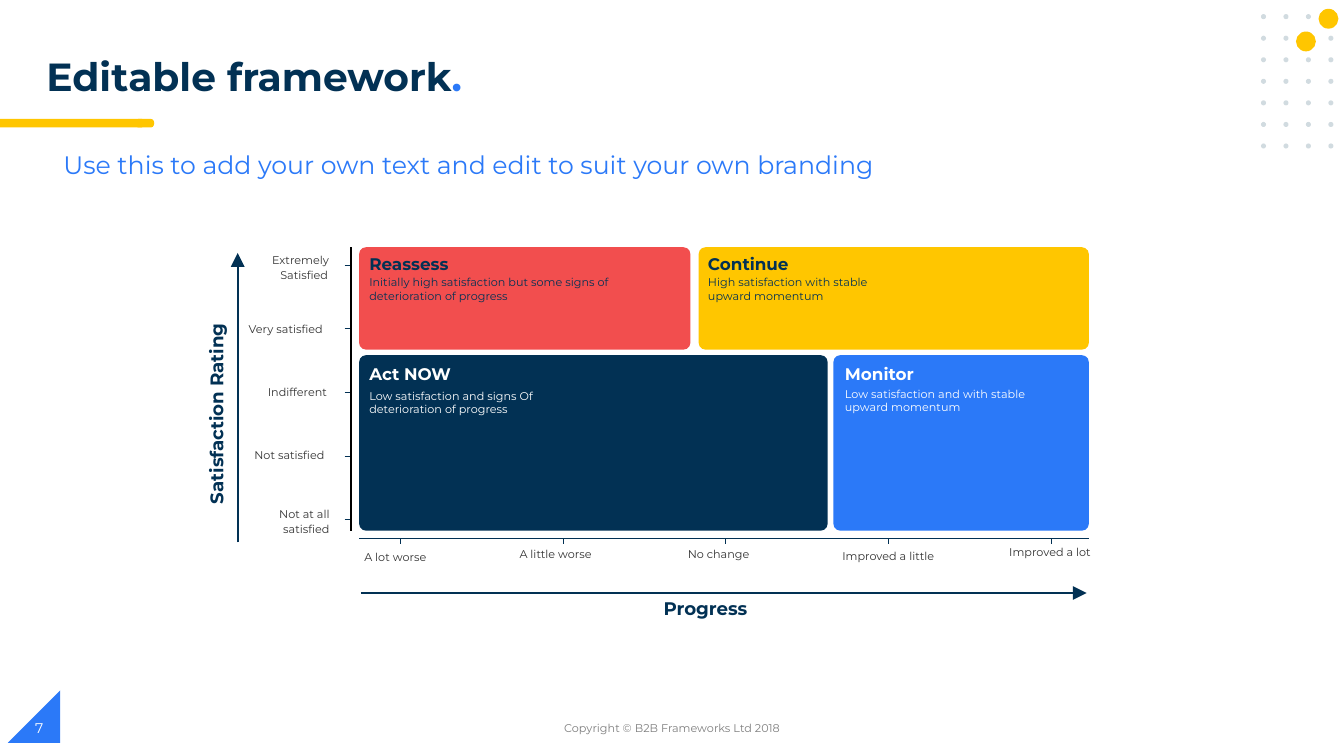
from lxml.etree import SubElement
from pptx import Presentation
from pptx.dml.color import RGBColor
from pptx.enum.shapes import MSO_CONNECTOR, MSO_SHAPE
from pptx.enum.text import MSO_ANCHOR, PP_ALIGN
from pptx.oxml.ns import qn
from pptx.util import Pt

NAVY = RGBColor(0x02, 0x31, 0x54)
BLUE = RGBColor(0x2B, 0x79, 0xF8)
YELLOW = RGBColor(0xFF, 0xC6, 0x00)
RED = RGBColor(0xF2, 0x4E, 0x4E)
DOT_GREY = RGBColor(0xD1, 0xDB, 0xE0)
LABEL_GREY = RGBColor(0x33, 0x33, 0x33)
FOOTER_GREY = RGBColor(0x7F, 0x7F, 0x7F)
WHITE = RGBColor(0xFF, 0xFF, 0xFF)
BLACK = RGBColor(0, 0, 0)
LEFT, CENTER = PP_ALIGN.LEFT, PP_ALIGN.CENTER

presentation = Presentation()
presentation.slide_width = Pt(960)
presentation.slide_height = Pt(540)
slide = presentation.slides.add_slide(presentation.slide_layouts[6])


def add_shape(kind, left, top, width, height, color):
    shape = slide.shapes.add_shape(kind, Pt(left), Pt(top), Pt(width), Pt(height))
    shape.shadow.inherit = False
    shape.fill.solid()
    shape.fill.fore_color.rgb = color
    shape.line.fill.background()
    return shape


def add_text(left, top, width, height, runs, insets=(7.2, 3.6), align=LEFT):
    """Each run is (text, size, color, bold); all share the first paragraph."""
    box = slide.shapes.add_textbox(Pt(left), Pt(top), Pt(width), Pt(height))
    frame = box.text_frame
    frame.word_wrap = True
    frame.margin_left, frame.margin_top = Pt(insets[0]), Pt(insets[1])
    frame.margin_right = frame.margin_bottom = 0
    frame.paragraphs[0].alignment = align
    for text, size, color, bold in runs:
        run = frame.paragraphs[0].add_run()
        run.text = text
        run.font.name = "Montserrat"
        run.font.size = Pt(size)
        run.font.color.rgb = color
        run.font.bold = bold
    return box


# Corner decoration: page triangle, yellow bar, dot grid
corner = add_shape(MSO_SHAPE.RIGHT_TRIANGLE, 5.6, 493.2, 37.4, 37.4, BLUE)
corner._element.spPr.xfrm.set("flipH", "1")
add_shape(MSO_SHAPE.FLOWCHART_TERMINATOR, 96.5, 85, 13.7, 6, YELLOW)
add_shape(MSO_SHAPE.RECTANGLE, 0, 85, 101.5, 6, YELLOW)
for row in range(7):
    for column in range(4):
        add_shape(MSO_SHAPE.OVAL, 900.7 + 16.05 * column, 10.1 + 15.4 * row,
                  3.6, 3.6, DOT_GREY)
for left, top in ((941.8, 6.3), (925.7, 22.5)):
    add_shape(MSO_SHAPE.OVAL, left, top, 14.2, 14.2, YELLOW)

# Title, subtitle and footer
title = add_text(26, 37.4, 406, 43.2, [("Editable framework", 28, NAVY, True),
                                       (".", 28, BLUE, True)])
title.text_frame.paragraphs[0].line_spacing = 0.9
add_text(38.2, 103, 618.5, 34.6,
         [("Use this to add your own text and edit to suit your own branding",
           18, BLUE, False)])
copyright_line = add_text(318.2, 505.4, 324, 28.8,
                          [("Copyright © B2B Frameworks Ltd 2018", 8, FOOTER_GREY, False)],
                          align=CENTER)
copyright_line.text_frame.margin_right = Pt(7.2)
page_number = add_text(18, 505.4, 216, 28.8, [("7", 10, WHITE, False)])
for footer in (copyright_line, page_number):
    footer.text_frame.margin_bottom = Pt(3.6)
    footer.text_frame.vertical_anchor = MSO_ANCHOR.MIDDLE

# Quadrants: box, fill, text colour, text box, gap, heading, description
quadrants = [
    ((256.5, 176.6, 236.7, 73.2), RED, NAVY, (262.8, 179.3, 172.8, 37.4), 2.2, 1,
     "Reassess", "Initially high satisfaction but some signs of deterioration of progress"),
    ((499, 176.6, 278.8, 73.2), YELLOW, NAVY, (504.7, 179.3, 142.6, 37.4), 2.2, 1,
     "Continue", "High satisfaction with stable upward momentum"),
    ((595.3, 253.7, 182.5, 125.4), BLUE, WHITE, (602.6, 255.6, 161.3, 40.3), 4.3, 2,
     "Monitor", "Low satisfaction and with stable upward momentum"),
    ((256.5, 253.7, 334.7, 125.4), NAVY, WHITE, (262.8, 253.7, 139, 43.9), 5.8, 4,
     "Act NOW", "Low satisfaction and signs Of deterioration of progress"),
]
for box, fill, color, text_box, inset, gap, heading, description in quadrants:
    panel = add_shape(MSO_SHAPE.ROUNDED_RECTANGLE, *box, fill)
    panel.adjustments[0] = 5 / box[3]
    text = add_text(*text_box, [(heading, 12, color, True)], (1, inset))
    paragraph = text.text_frame.add_paragraph()
    paragraph.space_before = Pt(gap)
    run = paragraph.add_run()
    run.text = description
    run.font.name = "Montserrat"
    run.font.size = Pt(8)
    run.font.color.rgb = color
    run.font.bold = False

# Axis titles
satisfaction = add_text(85.7, 284.4, 137.5, 15.8,
                        [("Satisfaction Rating", 13, NAVY, True)], (1, 0))
satisfaction.rotation = 270
add_text(473, 425.5, 69.1, 16.6, [("Progress", 13, NAVY, True)], (1, 0.9))

# Scale labels: text, left, top, width, alignment
labels = [
    ("Very satisﬁed", 176.7, 229, 67, LEFT),
    ("Indifferent", 190.3, 274.3, 54, LEFT),
    ("Not satisﬁed", 180.7, 319, 63.4, LEFT),
    ("A lot worse", 259.2, 392.4, 56.2, LEFT),
    ("A little worse", 370.1, 390.2, 65.5, LEFT),
    ("No change", 490.3, 390.2, 55.4, LEFT),
    ("Improved a little", 592.6, 391.7, 82.8, CENTER),
    ("Improved a lot", 715, 388.8, 69.1, CENTER),
]
for text, left, top, width, align in labels:
    add_text(left, top, width, 10.1, [(text, 8, LABEL_GREY, False)], (1, 0.9), align)

# Two-line labels with a hanging first line: text, left, top, width, margin, indent
for text, left, top, width, margin, indent in (
        ("Extremely Satisﬁed", 193, 177.8, 51.8, 7.2, -5.8),
        ("Not at all satisﬁed", 198, 359.3, 46.1, 4.3, -2.9)):
    label = add_text(left, top, width, 22.3, [(text, 8, LABEL_GREY, False)], (0, 1.4))
    paragraph = label.text_frame.paragraphs[0]
    paragraph.line_spacing = 1.15
    properties = paragraph._p.get_or_add_pPr()
    properties.set("marL", str(Pt(margin)))
    properties.set("indent", str(Pt(indent)))

# Axes, ticks and arrows: start x, start y, end x, end y, colour, weight, arrow
lines = [
    (256.5, 384.5, 777.8, 384.5, NAVY, 0.75, False),
    (250.6, 176.6, 250.6, 379.1, BLACK, 1, False),
    (169.8, 387.4, 169.8, 180.7, NAVY, 1.5, True),
    (257.8, 423.6, 776.2, 423.6, NAVY, 1.5, True),
]
for step in range(5):
    tick_x = 286 + 116.25 * step
    tick_y = 189.4 + 45.5 * step
    lines.append((tick_x, 384.5, tick_x, 388.8, NAVY, 0.75, False))
    lines.append((246.2, tick_y, 250, tick_y, NAVY, 0.75, False))
for start_x, start_y, end_x, end_y, color, weight, arrow in lines:
    line = slide.shapes.add_connector(MSO_CONNECTOR.STRAIGHT, Pt(start_x), Pt(start_y),
                                      Pt(end_x), Pt(end_y))
    line.line.color.rgb = color
    line.line.width = Pt(weight)
    if arrow:
        SubElement(line.line._get_or_add_ln(), qn("a:tailEnd"),
                   type="triangle", w="lg", len="lg")
    SubElement(line._element.spPr, qn("a:effectLst"))

presentation.save("out.pptx")
